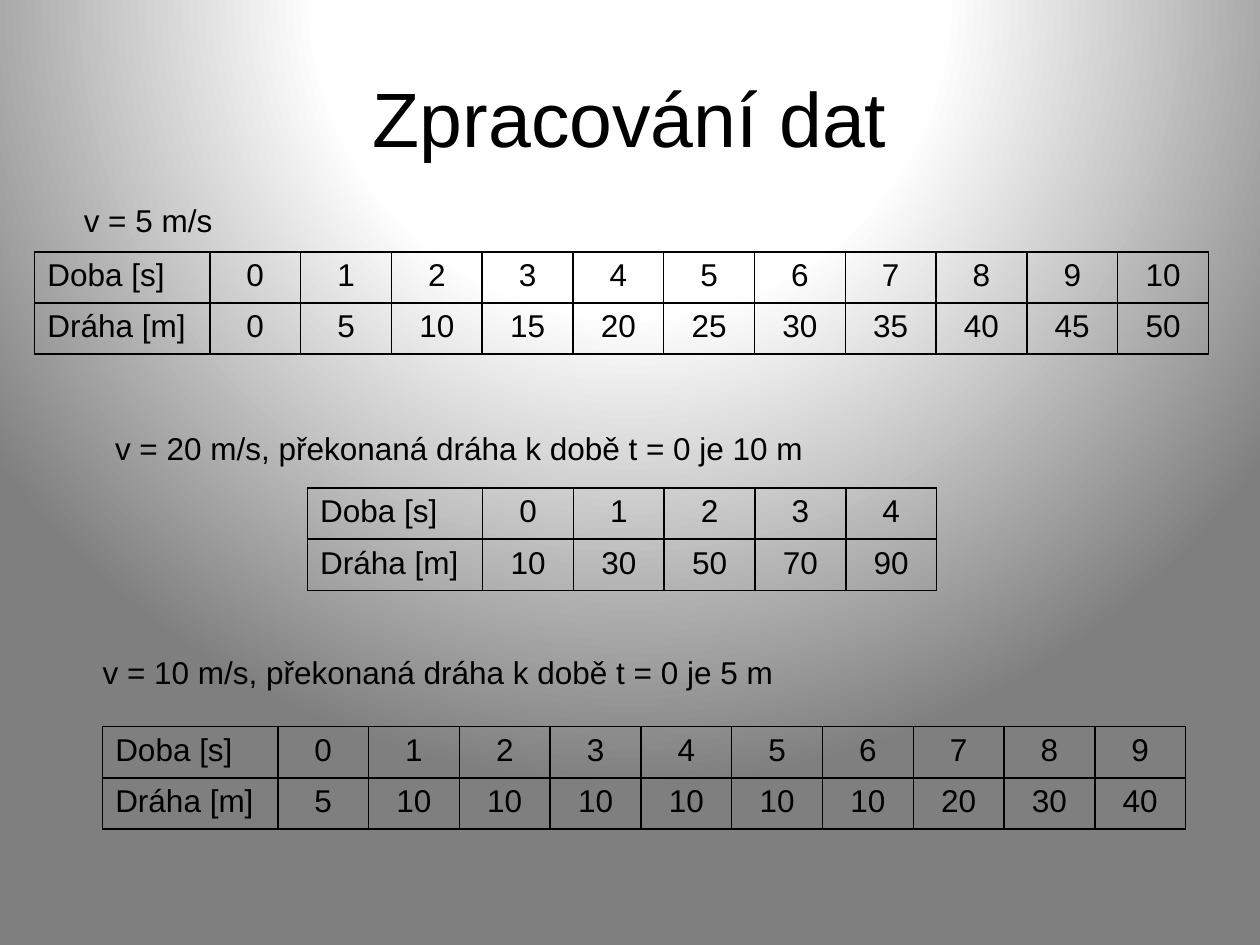
from dataclasses import dataclass

from pptx import Presentation
from pptx.dml.color import RGBColor
from pptx.enum.text import MSO_ANCHOR, MSO_AUTO_SIZE, PP_ALIGN
from pptx.oxml import parse_xml
from pptx.oxml.ns import nsdecls
from pptx.util import Cm, Pt


@dataclass(frozen=True)
class Theme:
    """Colours, font and type sizes of the slide."""

    font: str = "Arial"
    ink: str = "000000"
    title_size: int = 44
    body_size: int = 18
    border_width: int = 1
    glow: tuple = ((0, "FFFFFF"), (40, "FEFEFE"), (100, "7F7F7F"))


class SlideBuilder:
    """Adds styled elements to the current slide."""

    LABEL_WIDTH = Cm(3.53)
    VALUE_WIDTH = Cm(1.83)
    ROW_HEIGHT = Cm(1.03)

    def __init__(self, slide, theme):
        """Keep the slide and its theme."""
        self.slide = slide
        self.theme = theme

    def style(self, paragraph, size, align):
        """Format a paragraph and its runs."""
        paragraph.alignment = align
        for run in paragraph.runs:
            run.font.name = self.theme.font
            run.font.size = Pt(size)
            run.font.color.rgb = RGBColor.from_string(self.theme.ink)

    def background(self):
        """Fill the background with a circular glow from above."""
        stops = "".join(
            f'<a:gs pos="{position * 1000}"><a:srgbClr val="{color}"/></a:gs>'
            for position, color in self.theme.glow
        )
        glow = parse_xml(
            f'<p:bg {nsdecls("p", "a")}><p:bgPr><a:gradFill rotWithShape="1">'
            f'<a:gsLst>{stops}</a:gsLst><a:path path="circle">'
            '<a:fillToRect l="50000" t="-80000" r="50000" b="180000"/></a:path>'
            "</a:gradFill><a:effectLst/></p:bgPr></p:bg>"
        )
        self.slide.element.cSld.insert(0, glow)

    def title(self, text, left, top, width, height):
        """Place and format the title placeholder."""
        title = self.slide.shapes.title
        title.left, title.top, title.width, title.height = left, top, width, height
        frame = title.text_frame
        frame.text = text
        frame.vertical_anchor = MSO_ANCHOR.MIDDLE
        self.style(frame.paragraphs[0], self.theme.title_size, PP_ALIGN.CENTER)

    def caption(self, text, left, top, width):
        """Add a line of text above a table."""
        frame = self.slide.shapes.add_textbox(left, top, width, Cm(1.02)).text_frame
        frame.word_wrap = True
        frame.auto_size = MSO_AUTO_SIZE.SHAPE_TO_FIT_TEXT
        frame.text = text
        self.style(frame.paragraphs[0], self.theme.body_size, PP_ALIGN.LEFT)

    def borders(self, cell):
        """Draw a solid line on all four sides of a cell."""
        properties = cell._tc.get_or_add_tcPr()
        for index, side in enumerate("LRTB"):
            properties.insert(index, parse_xml(
                f'<a:ln{side} {nsdecls("a")} w="{Pt(self.theme.border_width)}">'
                f'<a:solidFill><a:srgbClr val="{self.theme.ink}"/></a:solidFill>'
                f"</a:ln{side}>"
            ))

    def table(self, distances, left, top):
        """Add a table of distances at times 0, 1, 2 and so on."""
        rows = (("Doba [s]", *range(len(distances))), ("Dráha [m]", *distances))
        width = self.LABEL_WIDTH + self.VALUE_WIDTH * len(distances)
        table = self.slide.shapes.add_table(
            len(rows), len(rows[0]), left, top, width, self.ROW_HEIGHT * len(rows)
        ).table
        table.first_row = table.horz_banding = False
        for index, column in enumerate(table.columns):
            column.width = self.VALUE_WIDTH if index else self.LABEL_WIDTH
        for row, values in zip(table.rows, rows):
            row.height = self.ROW_HEIGHT
            for index, (cell, value) in enumerate(zip(row.cells, values)):
                cell.text_frame.text = str(value)
                align = PP_ALIGN.CENTER if index else PP_ALIGN.LEFT
                self.style(cell.text_frame.paragraphs[0], self.theme.body_size, align)
                cell.fill.background()
                self.borders(cell)


def main():
    """Build and save the slide."""
    presentation = Presentation()
    presentation.slide_width, presentation.slide_height = Cm(25.4), Cm(19.05)
    slide = presentation.slides.add_slide(presentation.slide_layouts[5])
    builder = SlideBuilder(slide, Theme())
    builder.background()
    builder.title("Zpracování dat", Cm(1.27), Cm(0.76), Cm(22.86), Cm(3.18))

    builder.table(range(0, 51, 5), Cm(0.7), Cm(5.08))
    builder.table(range(10, 91, 20), Cm(6.2), Cm(9.84))
    builder.table((5, *[10] * 6, 20, 30, 40), Cm(2.07), Cm(14.65))

    builder.caption("v = 5 m/s", Cm(1.44), Cm(3.92), Cm(4.25))
    builder.caption("v = 20 m/s, překonaná dráha k době t = 0 je 10 m",
                    Cm(2.07), Cm(8.53), Cm(14.76))
    builder.caption("v = 10 m/s, překonaná dráha k době t = 0 je 5 m",
                    Cm(1.82), Cm(13.03), Cm(17.37))
    presentation.save("out.pptx")


if __name__ == "__main__":
    main()
